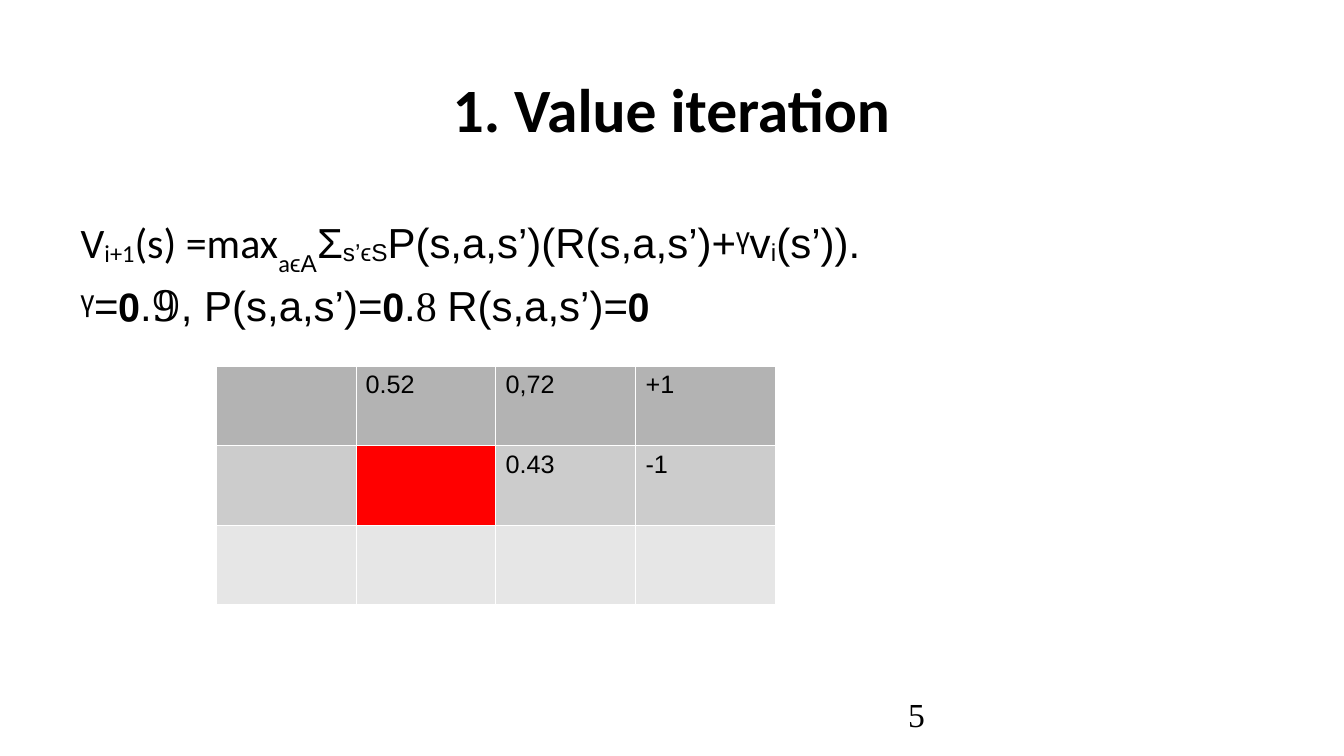
from dataclasses import dataclass

from lxml.etree import SubElement
from pptx import Presentation
from pptx.dml.color import RGBColor as Rgb
from pptx.enum.text import MSO_ANCHOR as Anchor, MSO_AUTO_SIZE as AutoSize, PP_ALIGN as Align
from pptx.oxml.ns import qn
from pptx.util import Pt

COLOURS = {
    "text": "000000",
    "border": "FFFFFF",
    "top": "B3B3B3",
    "middle": "CCCCCC",
    "bottom": "E6E6E6",
    "wall": "FF0000",
}
SANS, HEAD, SERIF = "Arial", "Calibri", "Times New Roman"
SUBSCRIPT, LOW_SUBSCRIPT = -14000000, -33000


@dataclass(frozen=True)
class Part:
    text: str
    face: str = SANS
    baseline: int = 0


@dataclass(frozen=True)
class State:
    value: str
    fill: str


FORMULA = [
    [
        Part("V", HEAD),
        Part("i+1", HEAD, SUBSCRIPT),
        Part("(s) =max", HEAD),
        Part("a", HEAD, LOW_SUBSCRIPT),
        Part("ϵA", SANS, LOW_SUBSCRIPT),
        Part("Σ"),
        Part("s’ϵS", SANS, SUBSCRIPT),
        Part("P(s,a,s’)(R(s,a,s’)+ᵞv"),
        Part("i", SANS, SUBSCRIPT),
        Part("(s’))."),
    ],
    [
        Part("ᵞ="),
        Part("𝟬", SERIF),
        Part("."),
        Part("𝟡", SERIF),
        Part(", P(s,a,s’)="),
        Part("𝟬", SERIF),
        Part("."),
        Part("8 ", SERIF),
        Part("R(s,a,s’)="),
        Part("𝟬", SERIF),
    ],
]
GRID = [
    [State(value, "top") for value in ("", "0.52", "0,72", "+1")],
    [State("", "middle"), State("", "wall"), State("0.43", "middle"), State("-1", "middle")],
    [State("", "bottom")] * 4,
]


def colour(key: str) -> Rgb:
    return Rgb.from_string(COLOURS[key])


def style(paragraph, size: float, face: str | None = None, bold: bool | None = None) -> None:
    font = paragraph.font
    font.size, font.bold = Pt(size), bold
    font.color.rgb = colour("text")
    if face:
        font.name = face


def place(shape, left: float, top: float, width: float, height: float) -> None:
    shape.left, shape.top = Pt(left), Pt(top)
    shape.width, shape.height = Pt(width), Pt(height)


def draw_title(title) -> None:
    place(title, 66, 28.8, 827.5, 103.7)
    frame = title.text_frame
    frame.text = "1. Value iteration"
    frame.vertical_anchor, frame.auto_size = Anchor.MIDDLE, AutoSize.NONE
    heading = frame.paragraphs[0]
    heading.alignment, heading.line_spacing = Align.CENTER, 0.9
    style(heading, 44, HEAD, True)


def draw_formula(body) -> None:
    place(body, 50.4, 151.2, 827.5, 342)
    frame = body.text_frame
    frame.vertical_anchor, frame.auto_size = Anchor.TOP, AutoSize.NONE
    for index, parts in enumerate(FORMULA):
        line = frame.add_paragraph() if index else frame.paragraphs[0]
        line.alignment, line.line_spacing = Align.JUSTIFY, 0.9
        line.space_before = Pt(10 if index else 0)
        properties = line._p.get_or_add_pPr()
        properties.set("marL", "0")
        properties.set("indent", "0")
        SubElement(properties, qn("a:buNone"))
        style(line, 30)
        for part in parts:
            run = line.add_run()
            run.text, run.font.name = part.text, part.face
            if part.baseline:
                run.font._element.set("baseline", str(part.baseline))


def draw_state(cell, state: State) -> None:
    properties = cell._tc.get_or_add_tcPr()
    for side in ("L", "R", "T", "B"):
        border = SubElement(properties, qn(f"a:ln{side}"), w=str(Pt(0.06)))
        paint = SubElement(border, qn("a:solidFill"))
        SubElement(paint, qn("a:srgbClr"), val=COLOURS["border"])
    cell.fill.solid()
    cell.fill.fore_color.rgb = colour(state.fill)
    cell.text = state.value
    style(cell.text_frame.paragraphs[0], 18, SANS, False)


def draw_grid(slide) -> None:
    rows, columns = len(GRID), len(GRID[0])
    world = slide.shapes.add_table(rows, columns, Pt(154), Pt(261.4), Pt(400), Pt(170)).table
    for row, states in enumerate(GRID):
        for column, state in enumerate(states):
            draw_state(world.cell(row, column), state)


def draw_page_number(slide) -> None:
    frame = slide.shapes.add_textbox(Pt(641.5), Pt(491.8), Pt(301.7), Pt(33.1)).text_frame
    frame.word_wrap = True
    frame.text = "5"
    style(frame.paragraphs[0], 24, SERIF)


def main() -> None:
    deck = Presentation()
    deck.slide_width, deck.slide_height = Pt(960), Pt(540)
    slide = deck.slides.add_slide(deck.slide_layouts[1])
    draw_formula(slide.placeholders[1])
    draw_title(slide.shapes.title)
    draw_grid(slide)
    draw_page_number(slide)
    deck.save("out.pptx")


if __name__ == "__main__":
    main()
